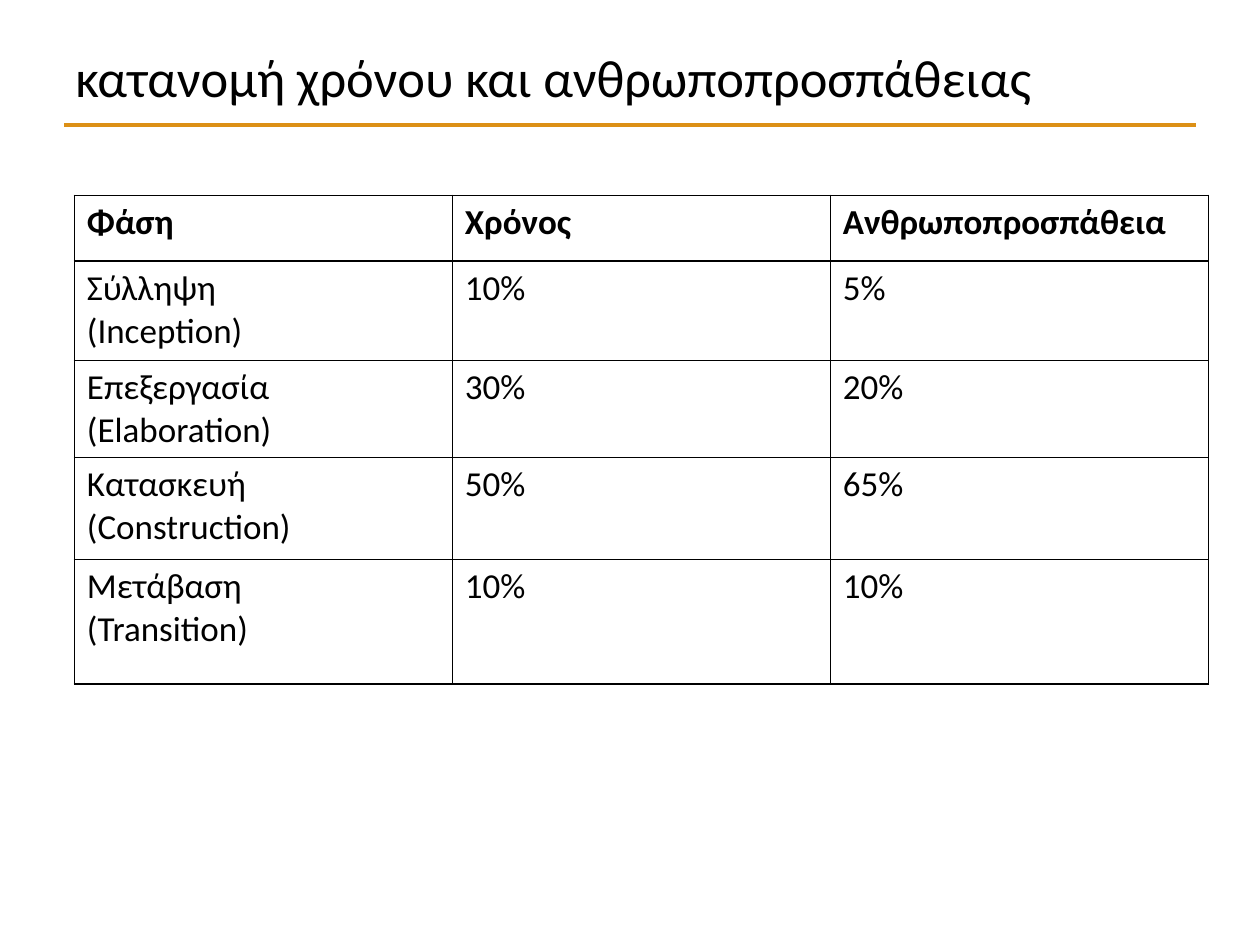
from lxml.etree import SubElement
from pptx import Presentation
from pptx.dml.color import RGBColor
from pptx.enum.shapes import MSO_CONNECTOR as Connector
from pptx.enum.text import MSO_ANCHOR as Anchor
from pptx.oxml.ns import qn
from pptx.util import Inches, Pt

WIDTH, HEIGHT = Inches(10), Inches(7.5)
INK, ACCENT, PAPER = "000000", "DC9016", "FFFFFF"
TITLE = "κατανομή χρόνου και ανθρωποπροσπάθειας"
PHASES = [
    ("Φάση", "Χρόνος", "Ανθρωποπροσπάθεια"),
    ("Σύλληψη\n(Inception)", "10%", "5%"),
    ("Επεξεργασία\n(Elaboration)", "30%", "20%"),
    ("Κατασκευή\n(Construction)", "50%", "65%"),
    ("Μετάβαση\n(Transition)", "10%", "10%"),
]
COLUMN_WIDTH = 3
ROW_HEIGHTS = [0.52, 0.79, 0.77, 0.81, 0.99]
HANGING = Inches(0.38)


def colour(value):
    """Turn a hex string into a colour."""
    return RGBColor.from_string(value)


def format_font(font, size, bold=False):
    """Apply the slide's typeface at the given size and weight."""
    for name, value in {"name": "Calibri", "size": Pt(size), "bold": bold}.items():
        setattr(font, name, value)
    font.color.rgb = colour(INK)


def add_title(slide):
    """Add the heading, centred vertically in its band."""
    heading = slide.shapes.add_textbox(
        int(WIDTH * 0.05), int(HEIGHT * 0.04), int(WIDTH * 0.9), Inches(0.61)
    ).text_frame
    for name, value in {"word_wrap": True, "vertical_anchor": Anchor.MIDDLE}.items():
        setattr(heading, name, value)
    heading.text = TITLE
    format_font(heading.paragraphs[0].runs[0].font, 30)


def add_rule(slide):
    """Draw the accent line below the heading."""
    y, margin = Inches(0.99), Inches(0.51)
    rule = slide.shapes.add_connector(Connector.STRAIGHT, margin, y, WIDTH - margin, y)
    rule.line.color.rgb = colour(ACCENT)
    rule.line.width = Pt(2.5)
    SubElement(rule.element.spPr, qn("a:effectLst"))


def outline_cell(cell):
    """Give a cell a thin border on all four sides."""
    properties = cell._tc.get_or_add_tcPr()
    for side in ("lnL", "lnR", "lnT", "lnB"):
        border = SubElement(properties, qn(f"a:{side}"), w=str(Pt(1)))
        ink = SubElement(border, qn("a:solidFill"))
        SubElement(ink, qn("a:srgbClr"), val=INK)


def fill_cell(cell, content, header):
    """Write a cell's lines with a hanging indent on plain paper."""
    cell.text = content
    for paragraph in cell.text_frame.paragraphs:
        indents = paragraph._p.get_or_add_pPr()
        for name, value in {"marL": HANGING, "indent": -HANGING}.items():
            indents.set(name, str(value))
        format_font(paragraph.runs[0].font, 20, header)
    outline_cell(cell)
    cell.fill.solid()
    cell.fill.fore_color.rgb = colour(PAPER)


def add_phase_table(slide):
    """Add the table of time and effort by phase."""
    column_count = len(PHASES[0])
    table = slide.shapes.add_table(
        len(PHASES), column_count, Inches(0.59), Inches(1.55),
        Inches(COLUMN_WIDTH * column_count), Inches(sum(ROW_HEIGHTS)),
    ).table
    for name, value in {"first_row": False, "horz_banding": False}.items():
        setattr(table, name, value)
    for column in table.columns:
        column.width = Inches(COLUMN_WIDTH)
    for index, (row, height, phase) in enumerate(zip(table.rows, ROW_HEIGHTS, PHASES)):
        row.height = Inches(height)
        for cell, content in zip(row.cells, phase):
            fill_cell(cell, content, header=index == 0)


def main():
    """Build and save the slide."""
    deck = Presentation()
    for name, value in {"slide_width": WIDTH, "slide_height": HEIGHT}.items():
        setattr(deck, name, value)
    slide = deck.slides.add_slide(deck.slide_layouts[6])
    add_rule(slide)
    add_title(slide)
    add_phase_table(slide)
    deck.save("out.pptx")


if __name__ == "__main__":
    main()
